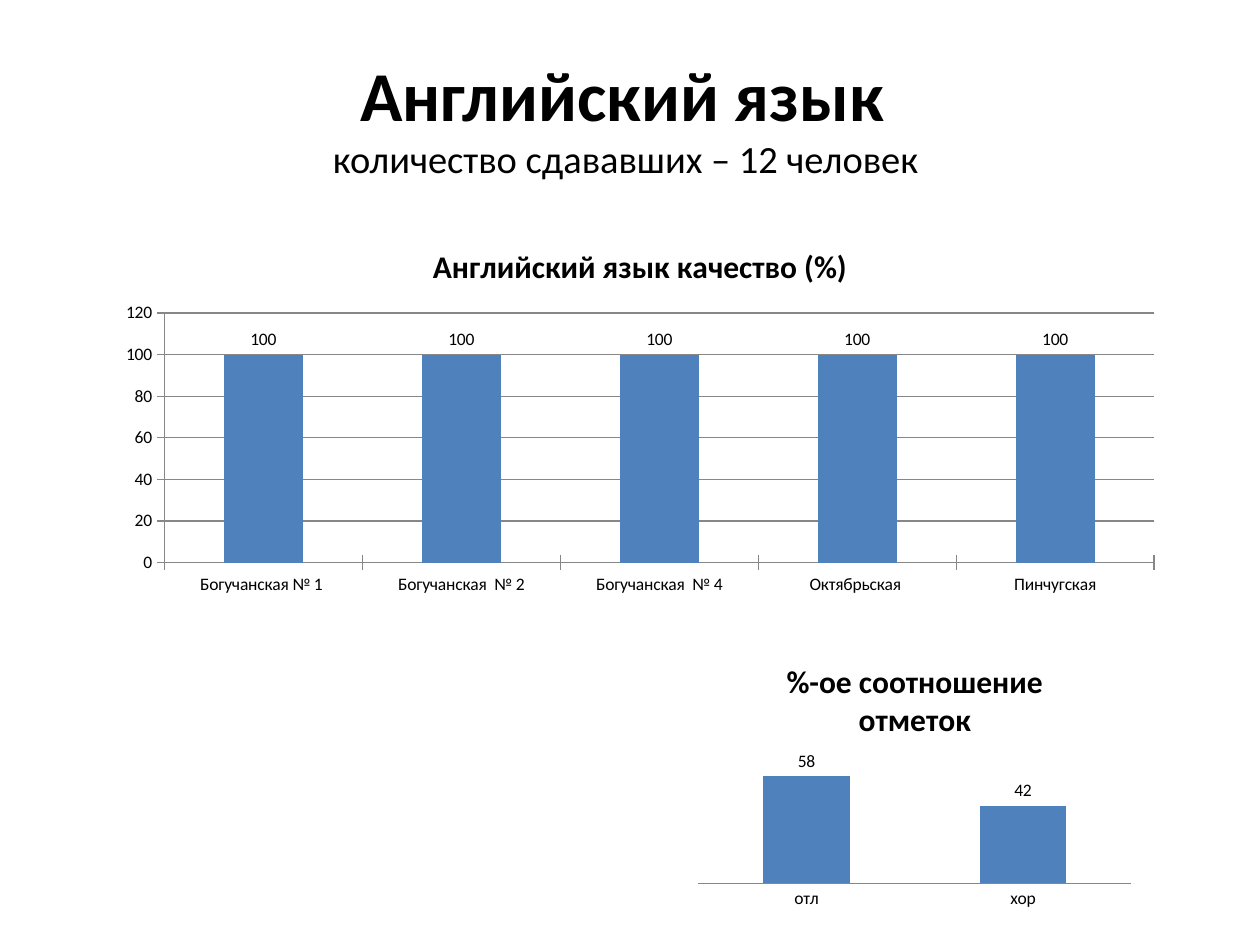
from pptx import Presentation, util as u
from pptx.chart.data import CategoryChartData
from pptx.dml.color import RGBColor
from pptx.enum import chart as ch, text as tx

WIDTH, HEIGHT = 10, 7.5
FONT, BLACK, BLUE, GREY = "Calibri", "000000", "4F81BD", "878787"


def colour(value):
    return RGBColor.from_string(value)


def place(box):
    return [u.Inches(length) for length in box]


def set_font(font, size, bold=False):
    for name, value in dict(name=FONT, size=u.Pt(size), bold=bold).items():
        setattr(font, name, value)
    font.color.rgb = colour(BLACK)


def add_heading(slide, box, subject, count):
    """Subject in large bold type, with the number of pupils below it."""
    heading = slide.shapes.title
    for name, value in zip(("left", "top", "width", "height"), place(box)):
        setattr(heading, name, value)
    frame = heading.text_frame
    frame.vertical_anchor = tx.MSO_ANCHOR.MIDDLE
    line = frame.paragraphs[0]
    line.alignment = tx.PP_ALIGN.CENTER
    subject_run = line.add_run()
    subject_run.text = subject
    set_font(subject_run.font, 40, True)
    line.add_line_break()
    count_run = line.add_run()
    count_run.text = count
    set_font(count_run.font, 22)


def add_columns(slide, box, title, results, overlap=0, show_scale=True):
    """Column chart of one series with its values above the columns."""
    data = CategoryChartData()
    data.categories = list(results)
    data.add_series("Series 1", list(results.values()))
    chart = slide.shapes.add_chart(
        ch.XL_CHART_TYPE.COLUMN_CLUSTERED, *place(box), data).chart
    set_font(chart.font, 10)
    chart.has_legend = False

    # Title
    chart.has_title = True
    chart.chart_title.include_in_layout = False
    caption = chart.chart_title.text_frame
    caption.text = title
    set_font(caption.paragraphs[0].runs[0].font, 18, True)

    # Columns and labels
    plot = chart.plots[0]
    labels_format = dict(show_value=True,
                         position=ch.XL_LABEL_POSITION.OUTSIDE_END)
    for name, value in dict(gap_width=150, overlap=overlap,
                            vary_by_categories=False,
                            has_data_labels=True).items():
        setattr(plot, name, value)
    for name, value in labels_format.items():
        setattr(plot.data_labels, name, value)
    set_font(plot.data_labels.font, 10)
    fill = plot.series[0].format.fill
    fill.solid()
    fill.fore_color.rgb = colour(BLUE)

    # Axes
    schools, scale = chart.category_axis, chart.value_axis
    mark = ch.XL_TICK_MARK.CROSS if show_scale else ch.XL_TICK_MARK.NONE
    for axis in (schools, scale):
        axis.major_tick_mark = mark
        axis.format.line.color.rgb = colour(GREY)
        set_font(axis.tick_labels.font, 10)
    scale.minimum_scale = 0
    scale.visible = show_scale
    scale.has_major_gridlines = show_scale
    if show_scale:
        scale.maximum_scale, scale.major_unit = 120, 20
        scale.major_gridlines.format.line.color.rgb = colour(GREY)


def main():
    deck = Presentation()
    deck.slide_width, deck.slide_height = u.Inches(WIDTH), u.Inches(HEIGHT)
    slide = deck.slides.add_slide(deck.slide_layouts[5])

    add_heading(slide, (0.05 * WIDTH, 0.04 * HEIGHT, 0.9 * WIDTH, 1.25),
                "Английский язык ", "количество сдававших – 12 человек ")

    # Quality by school
    schools = ("Богучанская № 1 ", "Богучанская  № 2", "Богучанская  № 4",
               "Октябрьская ", "Пинчугская")
    add_columns(slide, (0.83, 1.78, 0.85 * WIDTH, 0.4 * HEIGHT),
                "Английский язык качество (%)", dict.fromkeys(schools, 100))

    # Share of each mark
    add_columns(slide, (5.47, 5.09, 3.58, 2.16), "%-ое соотношение отметок",
                {"отл": 58, "хор": 42}, overlap=-25, show_scale=False)

    deck.save("out.pptx")


if __name__ == "__main__":
    main()
